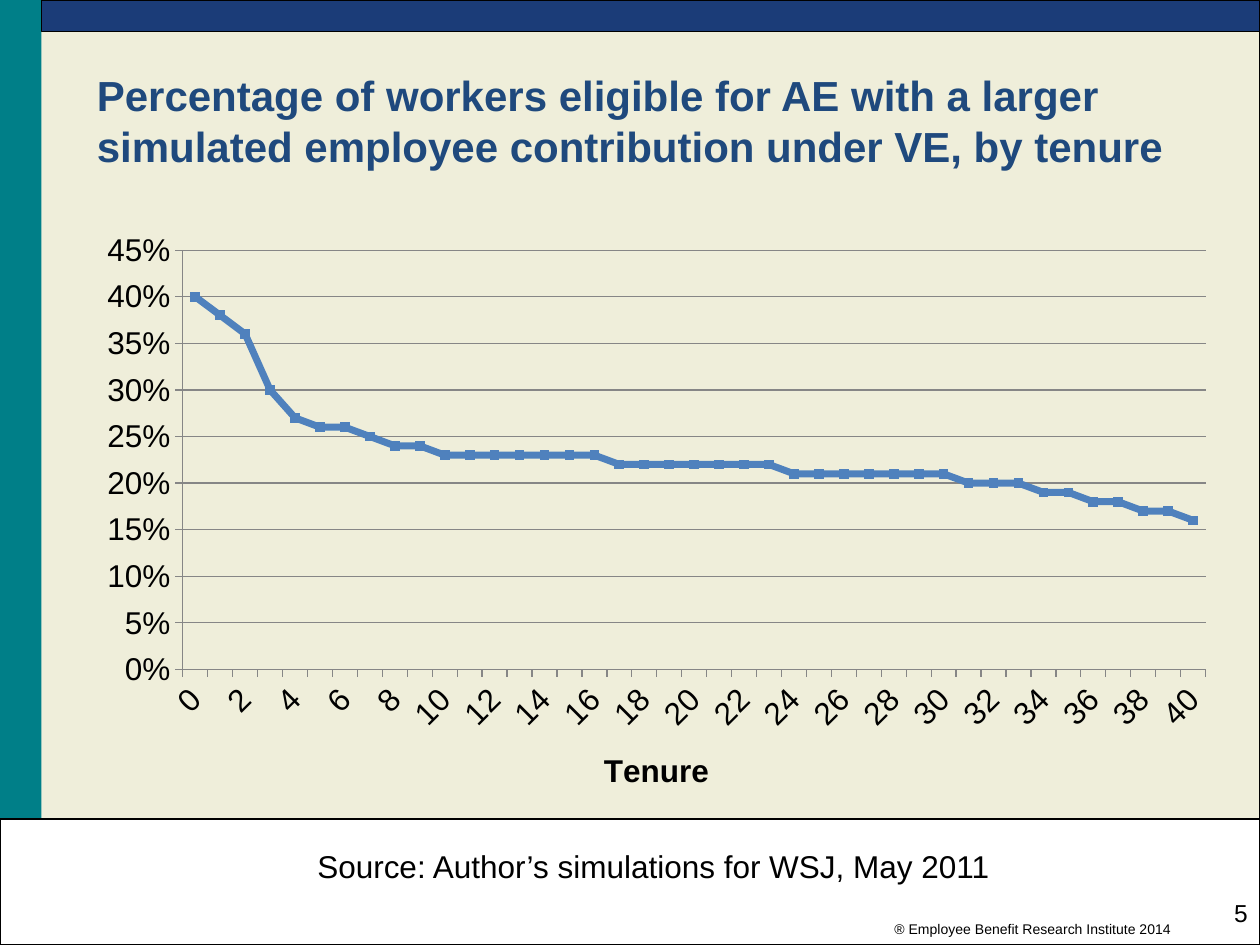
import pptx
import pptx.chart.data
import pptx.dml.color
import pptx.enum.chart
import pptx.enum.shapes
import pptx.enum.text
import pptx.oxml
import pptx.oxml.ns
import pptx.util

Inches = pptx.util.Inches
Pt = pptx.util.Pt
RGBColor = pptx.dml.color.RGBColor
PP_ALIGN = pptx.enum.text.PP_ALIGN
MSO_ANCHOR = pptx.enum.text.MSO_ANCHOR

BLACK = RGBColor(0x00, 0x00, 0x00)
WHITE = RGBColor(0xFF, 0xFF, 0xFF)
CREAM = RGBColor(0xEF, 0xEE, 0xDA)
TEAL = RGBColor(0x00, 0x7F, 0x88)
NAVY = RGBColor(0x1B, 0x3C, 0x78)
TITLE_BLUE = RGBColor(0x1F, 0x49, 0x7D)
SERIES_BLUE = RGBColor(0x4F, 0x81, 0xBD)
AXIS_GRAY = RGBColor(0x86, 0x86, 0x86)
FONT = "Arial"

# Percentage of workers for each year of tenure, starting at 0
PERCENTAGES = [
    40, 38, 36, 30, 27, 26, 26, 25, 24, 24, 23, 23, 23, 23, 23, 23, 23,
    22, 22, 22, 22, 22, 22, 22, 21, 21, 21, 21, 21, 21, 21,
    20, 20, 20, 19, 19, 18, 18, 17, 17, 16,
]


def add_panel(slide, box, fill, outlined=True):
    shape = slide.shapes.add_shape(
        pptx.enum.shapes.MSO_SHAPE.RECTANGLE, *map(Inches, box))
    shape.shadow.inherit = False
    shape.fill.solid()
    shape.fill.fore_color.rgb = fill
    if outlined:
        shape.line.color.rgb = BLACK
        shape.line.width = Pt(0.75)
    else:
        shape.line.fill.background()


def add_text(slide, box, text, size, color=BLACK, bold=False,
             align=PP_ALIGN.LEFT, anchor=MSO_ANCHOR.TOP, wrap=True):
    frame = slide.shapes.add_textbox(*map(Inches, box)).text_frame
    frame.word_wrap = wrap
    frame.vertical_anchor = anchor
    paragraph = frame.paragraphs[0]
    paragraph.text = text
    paragraph.alignment = align
    paragraph.font.name = FONT
    paragraph.font.size = Pt(size)
    paragraph.font.bold = bold
    paragraph.font.color.rgb = color


def add_background(slide, box):
    left, top, width, height = box
    band, bar, footer = 0.33, 0.25, 1
    add_panel(slide, box, CREAM)
    add_panel(slide, (left, top, band, height), TEAL, outlined=False)
    add_panel(slide, (left, top + height - footer, width, footer), WHITE)
    add_panel(slide, (left + band, top, width - band, bar), NAVY)


def style_axis(axis):
    axis.major_tick_mark = pptx.enum.chart.XL_TICK_MARK.OUTSIDE
    axis.minor_tick_mark = pptx.enum.chart.XL_TICK_MARK.NONE
    axis.format.line.color.rgb = AXIS_GRAY
    axis.format.line.width = Pt(0.75)


def add_tenure_chart(slide, box):
    data = pptx.chart.data.CategoryChartData(number_format="0%")
    data.categories = [str(year) for year in range(len(PERCENTAGES))]
    data.add_series("Series 1", [value / 100 for value in PERCENTAGES])
    chart = slide.shapes.add_chart(
        pptx.enum.chart.XL_CHART_TYPE.LINE_MARKERS,
        *map(Inches, box), data).chart
    chart.has_legend = False
    chart.has_title = False
    chart.font.name = FONT
    chart.font.size = Pt(18)
    chart.font.color.rgb = BLACK

    # Line and markers
    plot = chart.plots[0]
    plot.vary_by_categories = False
    series = plot.series[0]
    series.smooth = False
    series.format.line.color.rgb = SERIES_BLUE
    series.format.line.width = Pt(4)
    series.marker.style = pptx.enum.chart.XL_MARKER_STYLE.SQUARE
    series.marker.size = 5
    series.marker.format.fill.solid()
    series.marker.format.fill.fore_color.rgb = SERIES_BLUE
    series.marker.format.line.color.rgb = SERIES_BLUE

    # Percentage axis
    value_axis = chart.value_axis
    style_axis(value_axis)
    value_axis.minimum_scale = 0
    value_axis.maximum_scale = 0.45
    value_axis.major_unit = 0.05
    value_axis.tick_labels.number_format = "0%"
    value_axis.tick_labels.number_format_is_linked = False
    value_axis.has_major_gridlines = True
    value_axis.major_gridlines.format.line.color.rgb = AXIS_GRAY
    value_axis.major_gridlines.format.line.width = Pt(0.75)

    # Tenure axis: slanted labels on every second year
    category_axis = chart.category_axis
    style_axis(category_axis)
    category_axis.tick_labels.font.size = Pt(18)
    element = category_axis._element
    qn = pptx.oxml.ns.qn
    element.find(qn("c:txPr")).find(qn("a:bodyPr")).set("rot", "-2700000")
    element.find(qn("c:noMultiLvlLbl")).addprevious(pptx.oxml.parse_xml(
        f'<c:tickLblSkip {pptx.oxml.ns.nsdecls("c")} val="2"/>'))
    title = category_axis.axis_title.text_frame.paragraphs[0]
    title.text = "Tenure"
    title.font.name = FONT
    title.font.size = Pt(18)
    title.font.bold = True
    title.font.color.rgb = BLACK


def add_footer(slide, box):
    left, top, width, height = box
    add_text(slide, (left + 7, top + 0.76, 2.43, 0.24),
             "® Employee Benefit Research Institute 2014", 8, wrap=False)
    add_text(slide, (left + width - 0.42, top + 0.58, 0.42, 0.42),
             "5", 14, align=PP_ALIGN.RIGHT)
    add_text(slide, (left + 2.42, top + 0.17, 6.67, 0.4),
             "Source: Author’s simulations for WSJ, May 2011", 18)


def main():
    presentation = pptx.Presentation()
    presentation.slide_width = Inches(10)
    presentation.slide_height = Inches(7.5)
    slide = presentation.slides.add_slide(presentation.slide_layouts[6])
    add_background(slide, (0, 0, 10, 7.5))
    add_text(slide, (0.67, 0.33, 9.08, 1.25),
             "Percentage of workers eligible for AE with a larger simulated "
             "employee contribution under VE, by tenure",
             24, TITLE_BLUE, bold=True, anchor=MSO_ANCHOR.MIDDLE)
    add_tenure_chart(slide, (0.67, 1.75, 9.08, 4.75))
    add_footer(slide, (0, 6.5, 10, 1))
    presentation.save("out.pptx")


if __name__ == "__main__":
    main()
